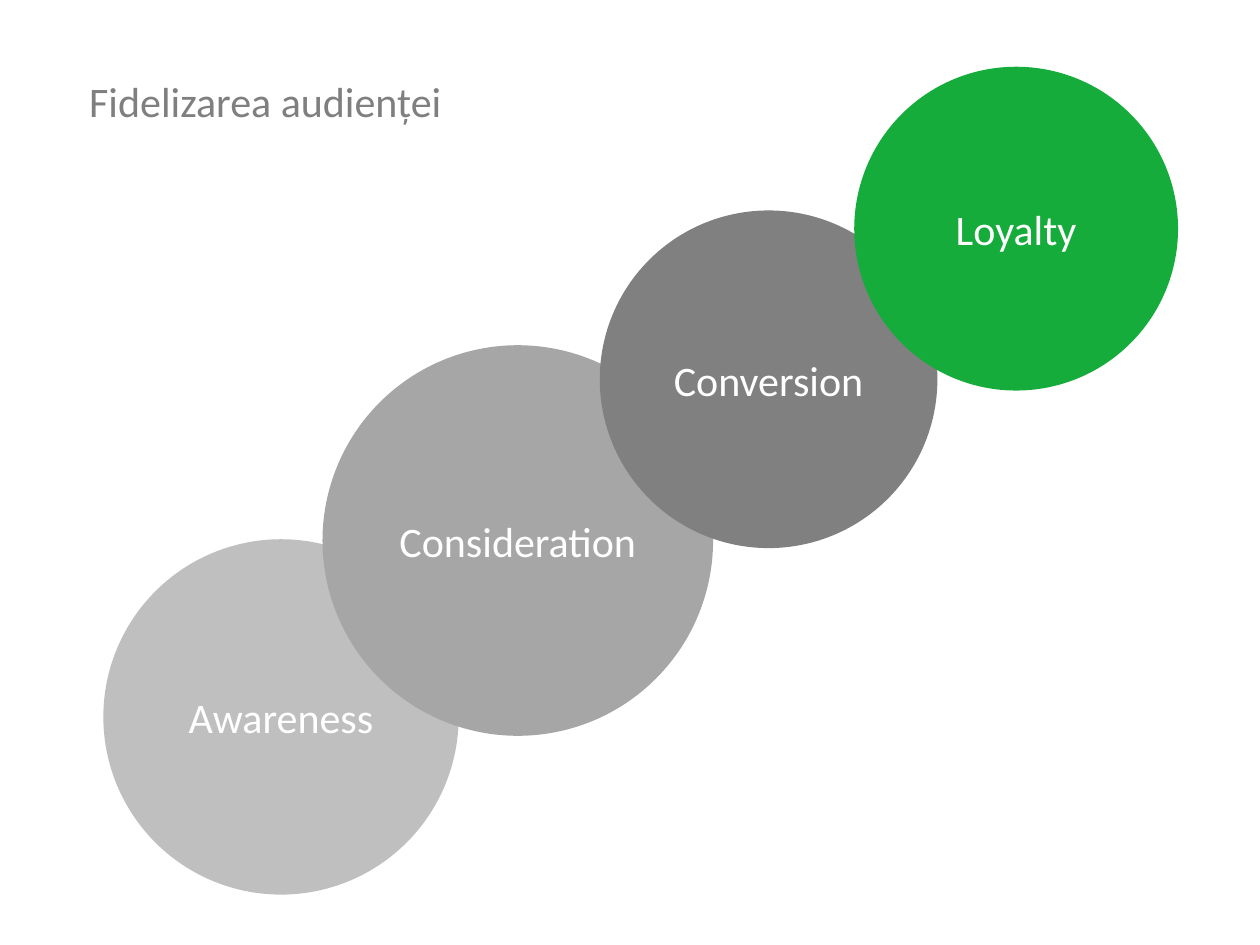
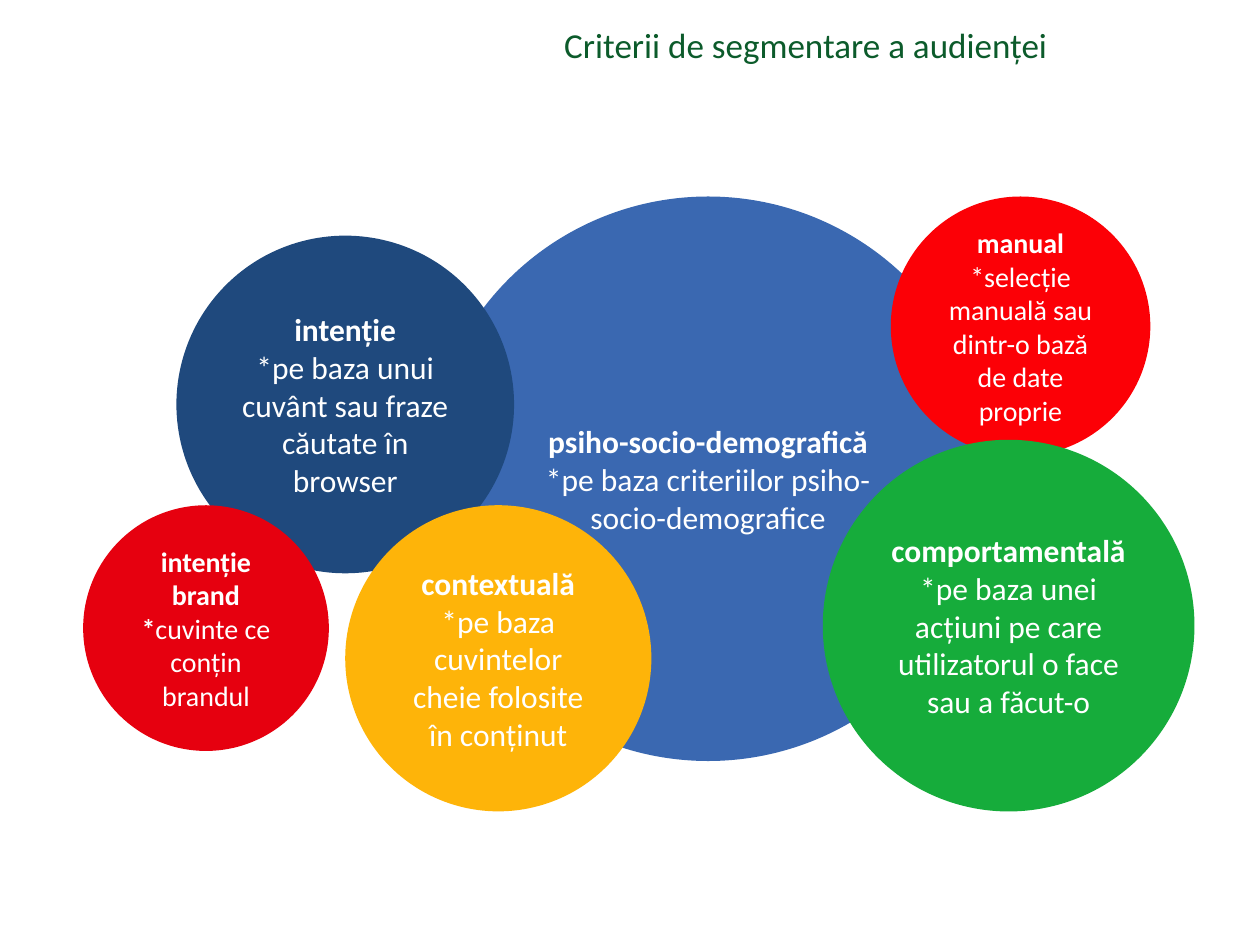
from dataclasses import dataclass

from pptx import Presentation
from pptx.dml.color import RGBColor
from pptx.enum import shapes, text
from pptx.util import Emu, Inches, Pt

# Shared look
FONT = "Calibri"
COLOURS = {
    "white": "FFFFFF",
    "title grey": "7F7F7F",
    "title green": "0C5B2B",
    "light grey": "BFBFBF",
    "mid grey": "A6A6A6",
    "dark grey": "808080",
    "green": "16AC3B",
    "blue": "3A68B1",
    "navy": "1F497D",
    "bright red": "FC0006",
    "red": "E6000F",
    "yellow": "FEB409",
}

# Square grid: 100 columns by 75 rows
COLUMNS, ROWS = 100, 75
CELL = Inches(10) // COLUMNS


@dataclass(frozen=True)
class Span:
    words: str
    bold: bool = False


@dataclass(frozen=True)
class Title:
    words: str
    column: float
    row: float
    width: float
    height: float
    size: int
    colour: str
    wrap: bool = True


@dataclass(frozen=True)
class Circle:
    column: float
    row: float
    diameter: float
    colour: str
    size: int
    paras: tuple[tuple[Span, ...], ...]


def cells(count: float) -> Emu:
    return Emu(round(count * CELL))


def rgb(name: str) -> RGBColor:
    return RGBColor.from_string(COLOURS[name])


def add_span(para, span: Span, size: int, colour: str) -> None:
    run = para.add_run()
    run.text = span.words
    run.font.name = FONT
    run.font.size = Pt(size)
    run.font.bold = span.bold
    run.font.color.rgb = rgb(colour)


def add_title(page, title: Title) -> None:
    box = page.shapes.add_textbox(
        *map(cells, (title.column, title.row, title.width, title.height)))
    frame = box.text_frame
    frame.word_wrap = title.wrap
    if not title.wrap:
        frame.auto_size = text.MSO_AUTO_SIZE.SHAPE_TO_FIT_TEXT
    add_span(frame.paragraphs[0], Span(title.words), title.size, title.colour)


def add_circle(page, circle: Circle) -> None:
    disc = page.shapes.add_shape(
        shapes.MSO_SHAPE.OVAL,
        *map(cells, (circle.column, circle.row, circle.diameter, circle.diameter)))
    disc.shadow.inherit = False
    disc.fill.solid()
    disc.fill.fore_color.rgb = rgb(circle.colour)
    disc.line.fill.background()
    frame = disc.text_frame
    frame.word_wrap = True
    frame.vertical_anchor = text.MSO_ANCHOR.MIDDLE
    for index, spans in enumerate(circle.paras):
        para = frame.add_paragraph() if index else frame.paragraphs[0]
        para.alignment = text.PP_ALIGN.CENTER
        for span in spans:
            add_span(para, span, circle.size, "white")


def stage(column: float, row: float, diameter: float, colour: str, name: str) -> Circle:
    return Circle(column, row, diameter, colour, 24, ((Span(name),),))


def criterion(column: float, row: float, diameter: float, colour: str, size: int,
              name: str, basis: str) -> Circle:
    return Circle(column, row, diameter, colour, size,
                  ((Span(name, True),), (Span(basis),)))


# Slide 1: steps towards loyalty
LOYALTY_TITLE = Title("Fidelizarea audienței", 6.1, 5.5, 89, 61.5, 24, "title grey")
STAGES = [
    stage(8.2, 42.8, 28.2, "light grey", "Awareness"),
    stage(25.6, 27.4, 31, "mid grey", "Consideration"),
    stage(47.6, 16.7, 26.8, "dark grey", "Conversion"),
    stage(67.8, 5.3, 25.7, "green", "Loyalty"),
]

# Slide 2: segmentation criteria, from back to front
CRITERIA_TITLE = Title("Criterii de segmentare a audienței", 43.8, 1.4, 41.6, 4.4,
                       20, "title green", wrap=False)
CRITERIA = [
    criterion(33.8, 15.6, 44.8, "blue", 18, "psiho-socio-demografică",
              "*pe baza criteriilor psiho-socio-demografice"),
    criterion(14, 18.7, 26.8, "navy", 18, "intenție",
              "*pe baza unui cuvânt sau fraze căutate în browser"),
    criterion(70.7, 15.6, 20.6, "bright red", 16, "manual",
              "*selecție manuală sau dintr-o bază de date proprie"),
    criterion(65.3, 34.9, 29.5, "green", 18, "comportamentală",
              "*pe baza unei acțiuni pe care utilizatorul o face sau a făcut-o"),
    criterion(27.4, 40.1, 24.3, "yellow", 18, "contextuală",
              "*pe baza cuvintelor cheie folosite în conținut"),
    Circle(6.6, 40.1, 19.5, "red", 16,
           ((Span("intenție brand *", True), Span("cuvinte ce conțin brandul")),)),
]


def main() -> None:
    deck = Presentation()
    deck.slide_width, deck.slide_height = cells(COLUMNS), cells(ROWS)
    for title, circles in ((LOYALTY_TITLE, STAGES), (CRITERIA_TITLE, CRITERIA)):
        page = deck.slides.add_slide(deck.slide_layouts[6])
        add_title(page, title)
        for circle in circles:
            add_circle(page, circle)
    deck.save("out.pptx")


if __name__ == "__main__":
    main()
